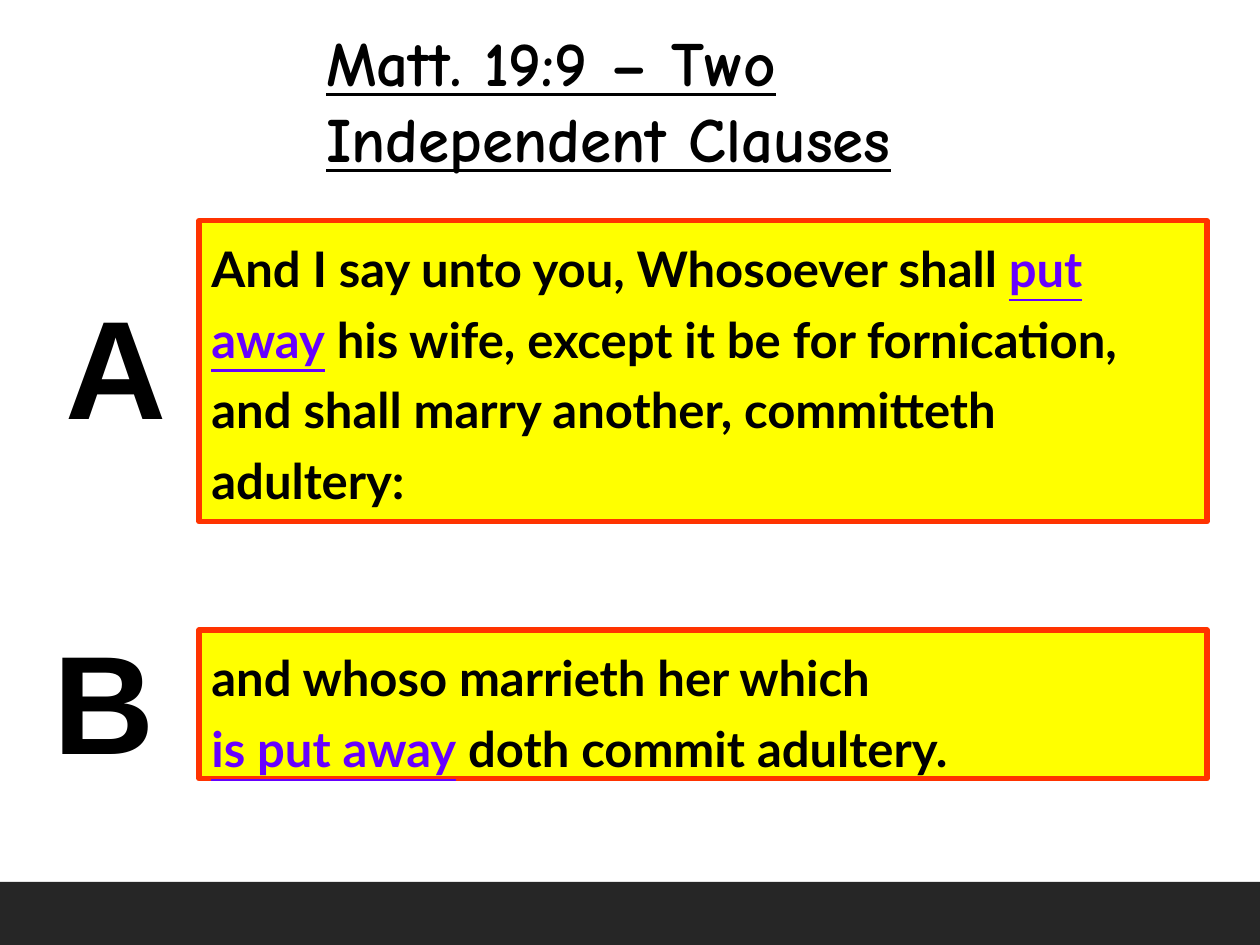
from pptx import Presentation
from pptx.dml.color import RGBColor
from pptx.enum.shapes import MSO_SHAPE as SHAPE
from pptx.enum.text import MSO_ANCHOR as ANCHOR, PP_ALIGN as ALIGN
from pptx.util import Pt

PX = 9144
WHITE = RGBColor(0xFF, 0xFF, 0xFF)
BLACK = RGBColor(0x00, 0x00, 0x00)
CHARCOAL = RGBColor(0x26, 0x26, 0x26)
YELLOW = RGBColor(0xFF, 0xFF, 0x00)
RED = RGBColor(0xFF, 0x33, 0x00)
PURPLE = RGBColor(0x66, 0x00, 0xFF)

CLAUSE_A = [
    [
        ("And I say unto you, Whosoever shall ", False),
        ("put away", True),
        (" his wife, except it be for fornication, "
         "and shall marry another, committeth adultery:", False),
    ],
]
CLAUSE_B = [
    [("and whoso marrieth her which", False)],
    [("is put away", True), (" doth commit adultery.", False)],
]


def to_emu(box):
    """Turn a px box into EMU lengths."""
    return [n * PX for n in box]


def style_run(r, font, size, color=BLACK, underline=False):
    """Give a run its bold face, size, colour and underline."""
    r.font.name = font
    r.font.size = Pt(size)
    r.font.bold = True
    r.font.underline = underline
    r.font.color.rgb = color


def add_rect(slide, box, fill):
    """Add a flat filled rectangle without outline or shadow."""
    sp = slide.shapes.add_shape(SHAPE.RECTANGLE, *to_emu(box))
    sp.shadow.inherit = False
    sp.fill.solid()
    sp.fill.fore_color.rgb = fill
    sp.line.fill.background()
    return sp


def add_label(slide, box, lines, font, size, wrap=False, underline=False):
    """Add a text box with one paragraph for each line."""
    tf = slide.shapes.add_textbox(*to_emu(box)).text_frame
    tf.word_wrap = wrap
    tf.text = "\n".join(lines)
    for p in tf.paragraphs:
        for r in p.runs:
            style_run(r, font, size, underline=underline)


def add_clause(slide, box, paragraphs):
    """Add a bordered verse panel with its key words underlined."""
    sp = add_rect(slide, box, YELLOW)
    sp.line.color.rgb = RED
    sp.line.width = Pt(3)
    tf = sp.text_frame
    tf.word_wrap = True
    tf.vertical_anchor = ANCHOR.TOP
    for i, parts in enumerate(paragraphs):
        p = tf.add_paragraph() if i else tf.paragraphs[0]
        p.alignment = ALIGN.LEFT
        p.line_spacing = 1.2
        for text, key in parts:
            r = p.add_run()
            r.text = text
            style_run(r, "Lato", 28, PURPLE if key else BLACK, key)


def add_lettered_clause(slide, box, letter, letter_offset, paragraphs):
    """Add a verse panel and its large letter, offset from the panel corner."""
    left, top, _, _ = box
    dx, dy = letter_offset
    add_clause(slide, box, paragraphs)
    add_label(slide, (left + dx, top + dy, 100, 143), [letter], "Arial", 80)


def main():
    """Build and save the slide."""
    prs = Presentation()
    prs.slide_width, prs.slide_height = to_emu((1000, 750))
    slide = prs.slides.add_slide(prs.slide_layouts[6])
    slide.background.fill.solid()
    slide.background.fill.fore_color.rgb = WHITE
    add_rect(slide, (0, 700, 1000, 50), CHARCOAL)
    add_lettered_clause(slide, (158, 175, 800, 239), "A", (-116, 42), CLAUSE_A)
    add_lettered_clause(slide, (158, 500, 800, 118), "B", (-125, -17), CLAUSE_B)
    add_label(slide, (249, 14, 521, 131),
              ["Matt. 19:9 – Two", "Independent Clauses"],
              "Comic Neue", 36, wrap=True, underline=True)
    prs.save("out.pptx")


if __name__ == "__main__":
    main()
